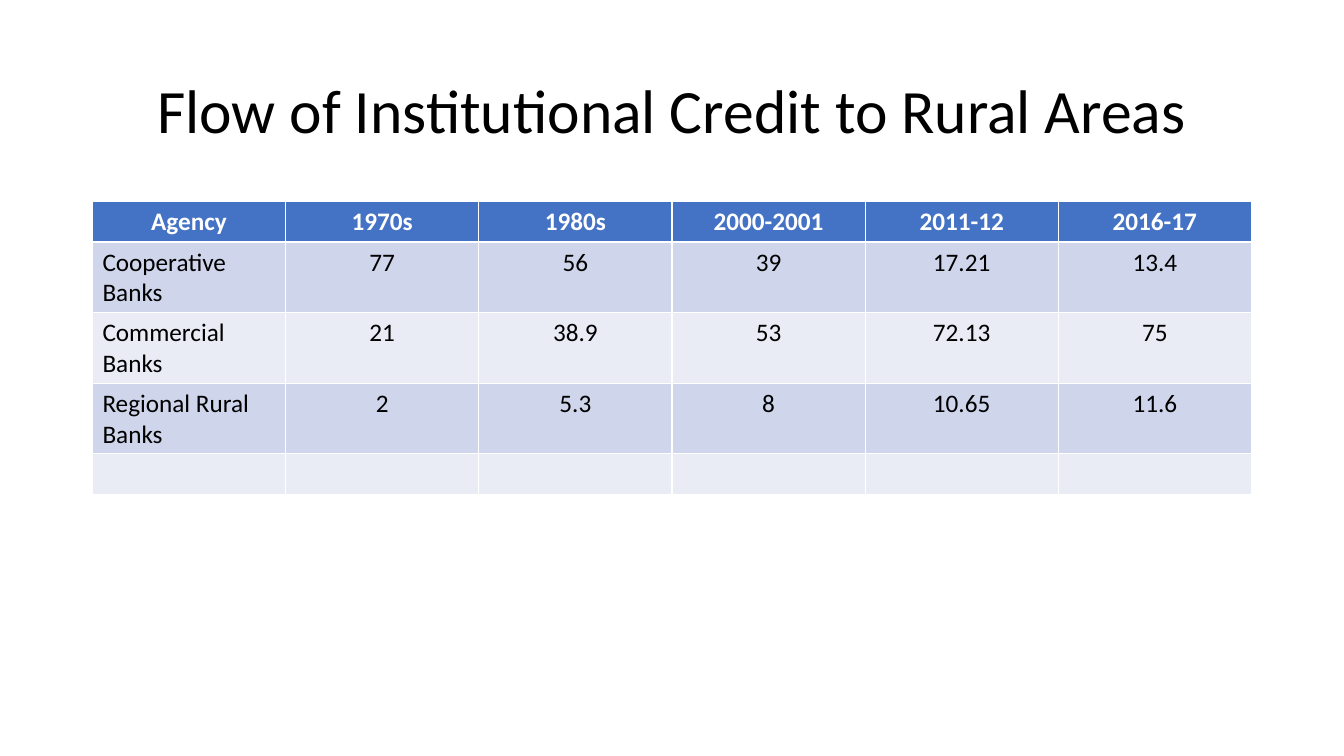
from dataclasses import dataclass

from pptx import Presentation
from pptx.dml.color import RGBColor
from pptx.enum.text import MSO_ANCHOR, PP_ALIGN
from pptx.util import Cm, Pt

LEFT, CENTER = PP_ALIGN.LEFT, PP_ALIGN.CENTER
MIDDLE = MSO_ANCHOR.MIDDLE
FONT = "Calibri"
COLORS = {
    "black": "000000",
    "white": "FFFFFF",
    "head": "4472C4",
    "dark": "CFD5EA",
    "light": "E9EBF5",
}
EDGE, WIDTH = Cm(2.33), Cm(29.21)


@dataclass
class Row:
    label: str
    values: list[str]
    fill: str
    ink: str = "black"
    bold: bool = False


ROWS = [
    Row("Agency", ["1970s", "1980s", "2000-2001", "2011-12", "2016-17"],
        "head", "white", True),
    Row("Cooperative Banks", ["77", "56", "39", "17.21", "13.4"], "dark"),
    Row("Commercial Banks", ["21", "38.9", "53", "72.13", "75"], "light"),
    Row("Regional Rural Banks", ["2", "5.3", "8", "10.65", "11.6"], "dark"),
    Row("", [""] * 5, "light"),
]


def style(frame, size: float, ink: str, align, bold: bool = False) -> None:
    for para in frame.paragraphs:
        para.alignment = align
        para.font.size = Pt(size)
        for run in para.runs:
            run.font.name = FONT
            run.font.size = Pt(size)
            run.font.bold = bold
            run.font.color.rgb = RGBColor.from_string(COLORS[ink])


def add_title(slide, text: str) -> None:
    frame = slide.shapes.add_textbox(EDGE, Cm(1.01), WIDTH, Cm(3.68)).text_frame
    frame.word_wrap = True
    frame.vertical_anchor = MIDDLE
    frame.text = text
    frame.paragraphs[0].line_spacing = 0.9
    style(frame, 44, "black", CENTER)


def add_grid(slide, rows: list[Row]) -> None:
    count = len(rows[0].values) + 1
    high = Cm(1.03)
    # The default table style supplies the white rules between cells
    table = slide.shapes.add_table(
        len(rows), count, EDGE, Cm(5.07), WIDTH, high * len(rows)).table
    for line, row in zip(table.rows, rows):
        line.height = high
        for col, text in enumerate([row.label, *row.values]):
            cell = line.cells[col]
            cell.fill.solid()
            cell.fill.fore_color.rgb = RGBColor.from_string(COLORS[row.fill])
            cell.text_frame.text = text
            align = CENTER if col or row.bold else LEFT
            style(cell.text_frame, 18, row.ink, align, row.bold)


def main() -> None:
    deck = Presentation()
    deck.slide_width, deck.slide_height = Cm(33.87), Cm(19.05)
    slide = deck.slides.add_slide(deck.slide_layouts[6])

    # Heading
    add_title(slide, "Flow of Institutional Credit to Rural Areas")

    # Credit share by agency
    add_grid(slide, ROWS)

    deck.save("out.pptx")


if __name__ == "__main__":
    main()
